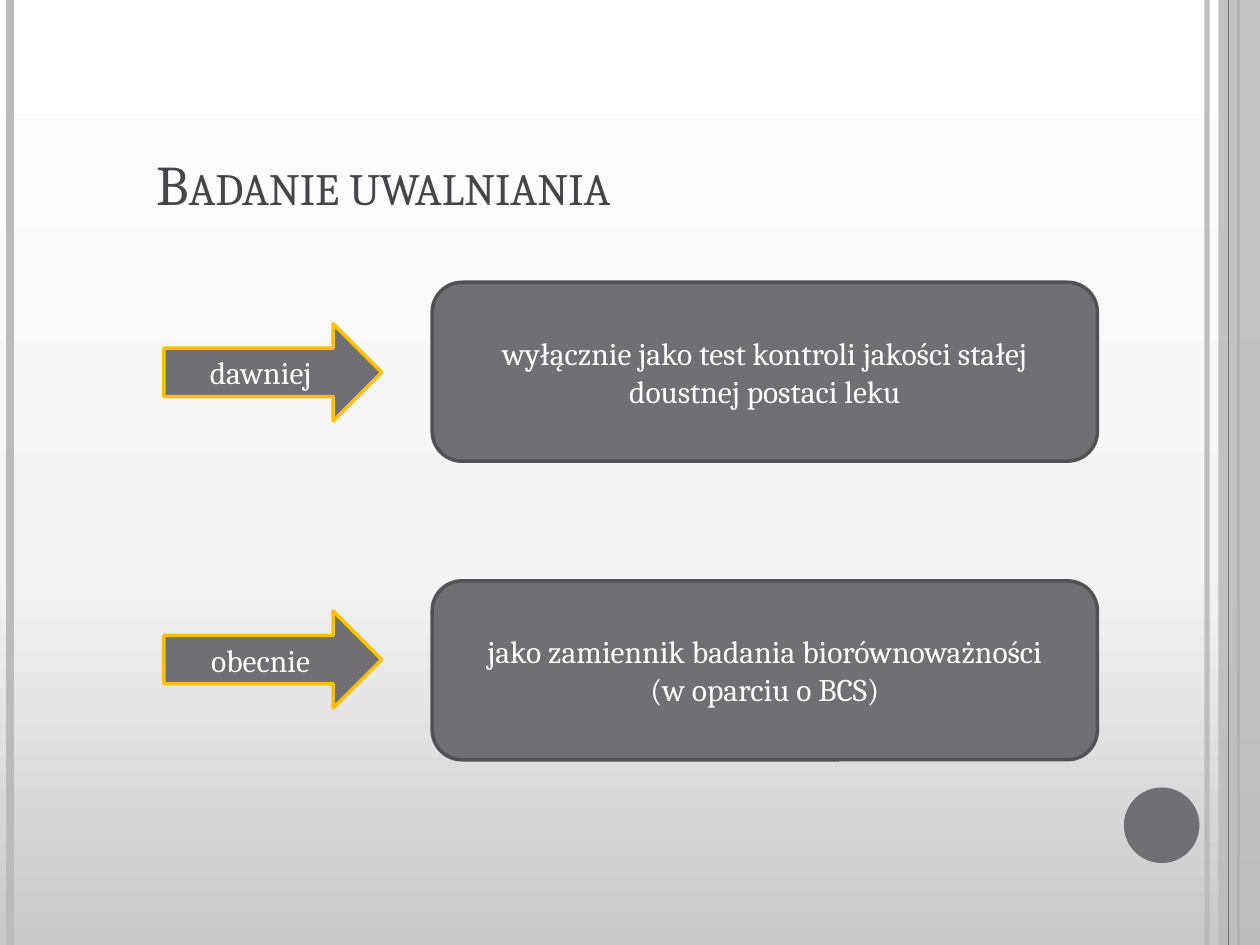
"""Build the slide on dissolution testing: its former and its present role."""
from copy import deepcopy

from lxml.etree import SubElement
from pptx import Presentation
from pptx.dml.color import RGBColor
from pptx.enum.shapes import MSO_CONNECTOR, MSO_SHAPE
from pptx.enum.text import MSO_ANCHOR, PP_ALIGN
from pptx.oxml.ns import qn
from pptx.util import Inches, Pt

COLORS = {
    "grey": "6F6F74", "light": "BBBBBC", "border": "525256", "gold": "FFC000",
    "title": "46464A", "white": "FFFFFF", "bottom": "C9C9C9", "middle": "F4F4F4",
}


def set_alpha(fill_parent, percent):
    color = next(fill_parent.iter(qn("a:srgbClr")))
    SubElement(color, qn("a:alpha")).set("val", str(percent * 1000))


def add_block(kind, box, fill, border=None, lines=()):
    block = slide.shapes.add_shape(kind, *map(Inches, box))
    block.shadow.inherit = False
    block.fill.solid()
    block.fill.fore_color.rgb = RGBColor.from_string(COLORS[fill])
    if border:
        block.line.color.rgb = RGBColor.from_string(COLORS[border])
        block.line.width = Pt(2)
    else:
        block.line.fill.background()
    frame = block.text_frame
    frame.word_wrap = True
    frame.vertical_anchor = MSO_ANCHOR.MIDDLE
    for i, line in enumerate(lines):
        paragraph = frame.add_paragraph() if i else frame.paragraphs[0]
        paragraph.alignment = PP_ALIGN.CENTER
        run = paragraph.add_run()
        run.text = line
        run.font.name = "Cambria"
        run.font.size = Pt(18)
        run.font.color.rgb = RGBColor.from_string(COLORS["white"])
    return block


prs = Presentation()
prs.slide_width, prs.slide_height = Inches(10), Inches(7.5)
slide = prs.slides.add_slide(prs.slide_layouts[6])

backdrop = slide.background.fill
backdrop.gradient()
backdrop.gradient_angle = 90
stop_list = next(slide.element.iter(qn("a:gsLst")))
stop_list.append(deepcopy(stop_list[-1]))
shades = [(0, "bottom"), (0.4, "middle"), (1, "white")]
for stop, (position, shade) in zip(backdrop.gradient_stops, shades):
    stop.position = position
    stop.color.rgb = RGBColor.from_string(COLORS[shade])

stripes = [(9.58, "light", 3, 93), (0.08, "light", 4.5, 100),
           (9.83, "grey", 1.5, 100), (9.75, "grey", 0.75, 100)]
for x, color, width, opacity in stripes:
    if x == 9.75:
        band = add_block(MSO_SHAPE.RECTANGLE, (9.67, 0, 0.33, 7.5), "light")
        set_alpha(band.element.spPr, 87)
    stripe = slide.shapes.add_connector(
        MSO_CONNECTOR.STRAIGHT, Inches(x), Inches(0), Inches(x), Inches(7.5))
    stripe.line.color.rgb = RGBColor.from_string(COLORS[color])
    stripe.line.width = Pt(width)
    if opacity < 100:
        set_alpha(stripe.element.spPr, opacity)
    SubElement(stripe.element.spPr, qn("a:effectLst"))

add_block(MSO_SHAPE.OVAL, (8.92, 6.25, 0.6, 0.6), "grey")

title = slide.shapes.add_textbox(
    Inches(1.14), Inches(0.52), Inches(7.68), Inches(1.25)).text_frame
title.word_wrap = True
title.vertical_anchor = MSO_ANCHOR.BOTTOM
heading = title.paragraphs[0].add_run()
heading.text = "Badanie uwalniania"
heading.font.name = "Cambria"
heading.font.size = Pt(32)
heading.font.color.rgb = RGBColor.from_string(COLORS["title"])
heading.font._element.set("cap", "small")

roles = [
    (2.24, ["wyłącznie jako test kontroli jakości stałej doustnej postaci leku"]),
    (4.61, ["jako zamiennik badania biorównoważności", "(w oparciu o BCS)"]),
]
for top, lines in roles:
    add_block(MSO_SHAPE.ROUNDED_RECTANGLE, (3.43, top, 5.28, 1.42),
              "grey", "border", lines)

for top, period in [(2.57, "dawniej"), (4.85, "obecnie")]:
    add_block(MSO_SHAPE.RIGHT_ARROW, (1.3, top, 1.73, 0.77),
              "grey", "gold", [period])

prs.save("out.pptx")
